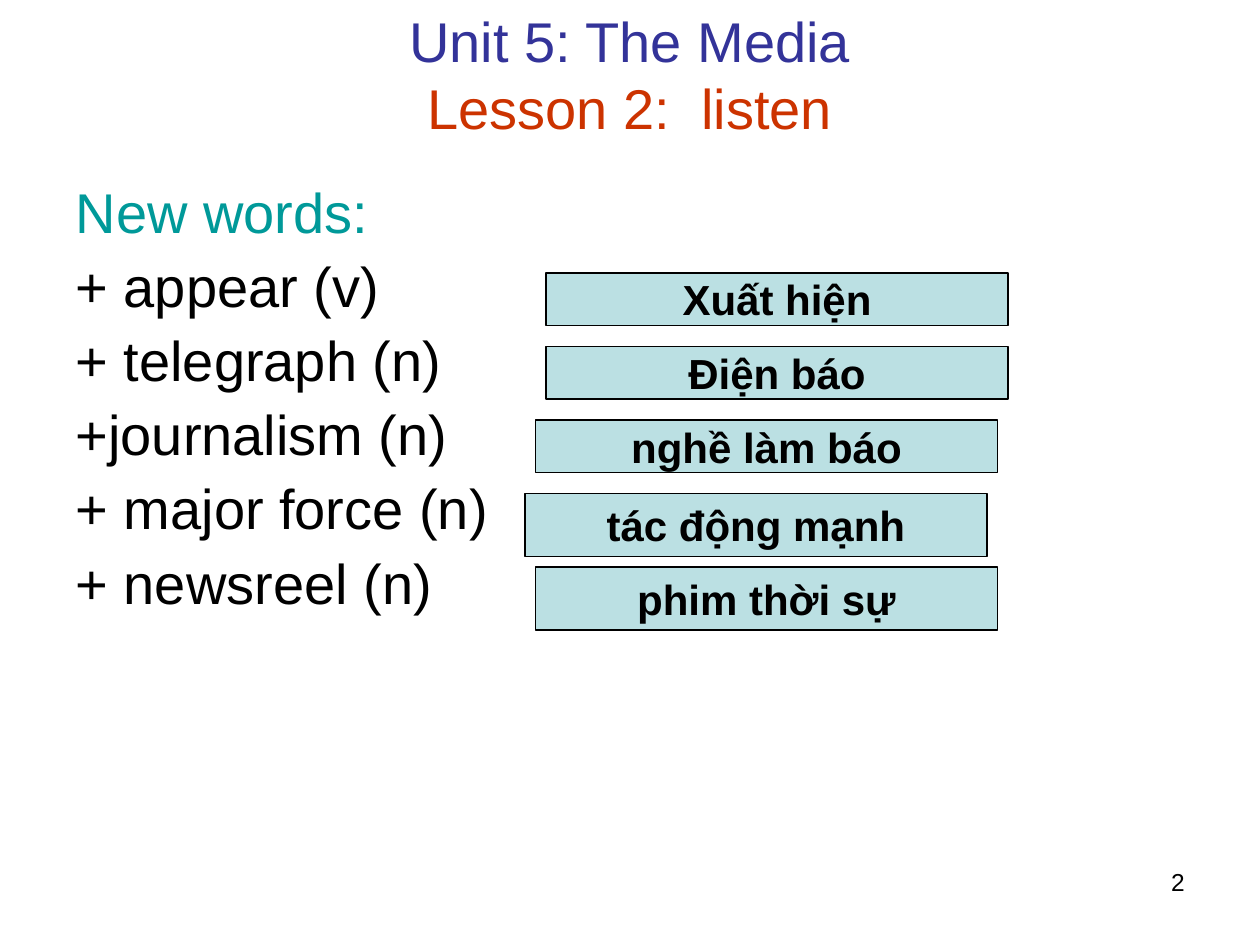
"""Build a vocabulary slide pairing English words with Vietnamese meanings."""
from lxml import etree
from pptx import Presentation
from pptx.dml.color import RGBColor
from pptx.enum.shapes import MSO_SHAPE
from pptx.enum.text import MSO_ANCHOR, MSO_AUTO_SIZE, PP_ALIGN
from pptx.oxml.ns import qn
from pptx.util import Inches, Pt

RECTANGLE = MSO_SHAPE.RECTANGLE
MIDDLE, TOP = MSO_ANCHOR.MIDDLE, MSO_ANCHOR.TOP
LEFT, CENTER, RIGHT = PP_ALIGN.LEFT, PP_ALIGN.CENTER, PP_ALIGN.RIGHT
NO_FIT = MSO_AUTO_SIZE.NONE

THEME = {
    "font": "Arial",
    "unit": "333399", "lesson": "CC3300", "heading": "009999",
    "text": "000000", "card": "BBE0E3",
    "large": 32, "meaning": 24, "number": 14, "line": 0.75,
}
CELL = Inches(1) // 12
COLUMNS, ROWS = 120, 90
WORDS = ["New words:", "+ appear (v)", "+ telegraph (n)", "+journalism (n)",
         "+ major force (n)", "+ newsreel (n)"]
MEANINGS = [("Xuất hiện", 52, 5), ("Điện báo", 52, 5), ("nghề làm báo", 51, 5),
            ("tác động mạnh", 50, 6), ("phim thời sự", 51, 6)]


def place(shape, column, row, width, height, **frame_format):
    box = {"left": column, "top": row, "width": width, "height": height}
    for name, cells in box.items():
        setattr(shape, name, round(cells * CELL))
    for name, value in frame_format.items():
        setattr(shape.text_frame, name, value)


def write(paragraph, text, size, color, alignment, bold=False):
    paragraph.alignment = alignment
    run = paragraph.add_run()
    run.text = text
    font_format = {"name": THEME["font"], "size": Pt(THEME[size]), "bold": bold}
    for name, value in font_format.items():
        setattr(run.font, name, value)
    run.font.color.rgb = RGBColor.from_string(THEME[color])


presentation = Presentation()
presentation.slide_width = COLUMNS * CELL
presentation.slide_height = ROWS * CELL
slide = presentation.slides.add_slide(presentation.slide_layouts[1])

title = slide.shapes.title
place(title, 6, 3, 108, 8, vertical_anchor=MIDDLE, auto_size=NO_FIT, word_wrap=True)
title_paragraph = title.text_frame.paragraphs[0]
write(title_paragraph, "Unit 5: The Media", "large", "unit", CENTER)
title_paragraph.add_line_break()
write(title_paragraph, "Lesson 2:  listen", "large", "lesson", CENTER)

body = slide.placeholders[1]
place(body, 6, 17, 108, 65.4, vertical_anchor=TOP, auto_size=NO_FIT, word_wrap=True)
for index, word in enumerate(WORDS):
    frame = body.text_frame
    paragraph = frame.add_paragraph() if index else frame.paragraphs[0]
    properties = paragraph._p.get_or_add_pPr()
    properties.set("marL", str(8 * CELL))
    properties.set("indent", str(-8 * CELL))
    etree.SubElement(properties, qn("a:buNone"))
    paragraph.line_spacing = 0.9
    paragraph.space_before = Pt(7.8 if index else 0)
    write(paragraph, word, "large", "text" if index else "heading", LEFT)

for index, (meaning, column, height) in enumerate(MEANINGS):
    card = slide.shapes.add_shape(RECTANGLE, 0, 0, CELL, CELL)
    place(card, column, 26 + 7 * index, 44, height, vertical_anchor=MIDDLE, word_wrap=False)
    card.shadow.inherit = False
    card.fill.solid()
    card.fill.fore_color.rgb = RGBColor.from_string(THEME["card"])
    card.line.color.rgb = RGBColor.from_string(THEME["text"])
    card.line.width = Pt(THEME["line"])
    write(card.text_frame.paragraphs[0], meaning, "meaning", "text", CENTER, bold=True)

number = slide.shapes.add_textbox(0, 0, CELL, CELL)
place(number, 86, 82, 28, 6.25, vertical_anchor=TOP, word_wrap=True)
write(number.text_frame.paragraphs[0], "2", "number", "text", RIGHT)

presentation.save("out.pptx")
